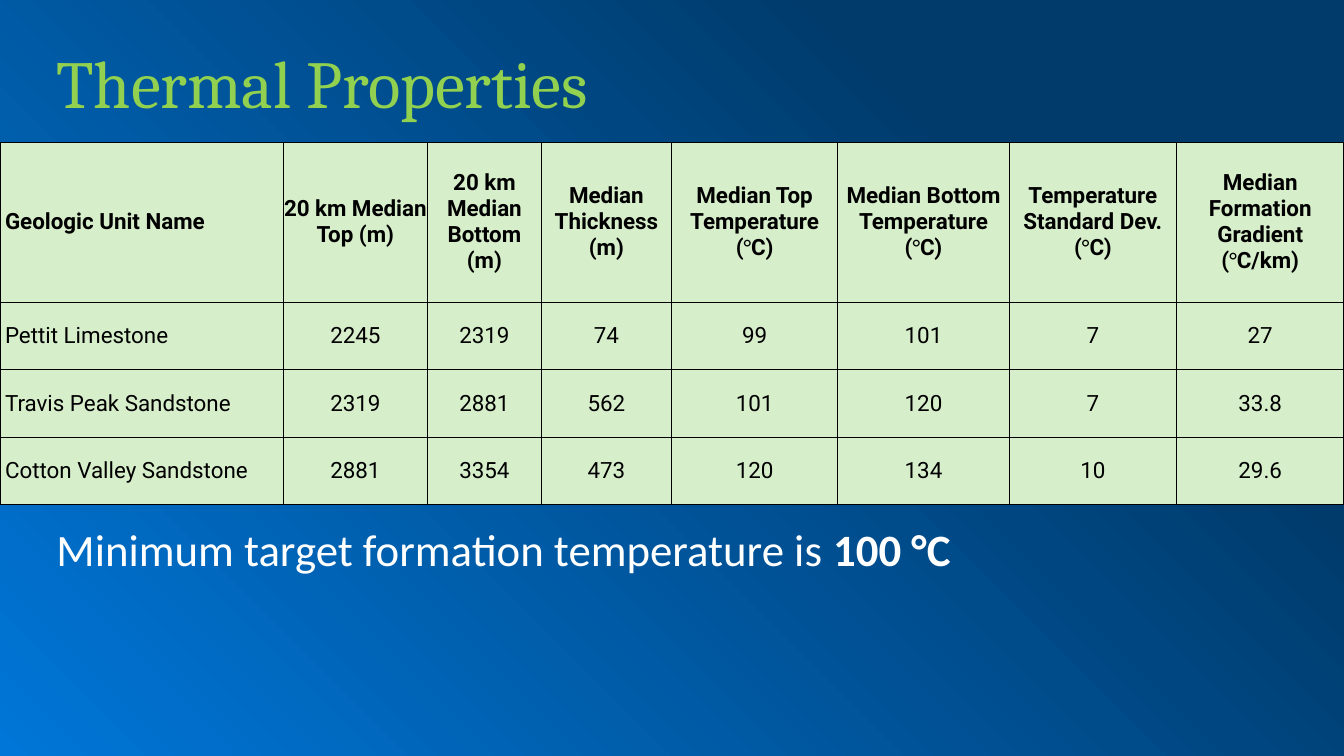
from lxml.etree import SubElement
from pptx import Presentation
from pptx.dml.color import RGBColor
from pptx.enum.text import MSO_ANCHOR as Anchor, MSO_AUTO_SIZE as AutoSize, PP_ALIGN as Align
from pptx.oxml.ns import qn
from pptx.util import Inches, Pt

COLORS = {
    "night": "003B6C", "azure": "0076D8", "lime": "92D050",
    "white": "FFFFFF", "black": "000000", "mint": "D7EECB",
}
TITLE_FONT = {"name": "Cambria", "size": Pt(48), "bold": False}
BODY_FONT = {"name": "Calibri", "size": Pt(32), "bold": False}
CELL_FONT = {"name": "Roboto", "size": Pt(16)}
DEGREE_FONT = {"name": "Calibri", "size": Pt(16), "bold": False}
COLUMN_WIDTHS = [2.81, 1.43, 1.13, 1.29, 1.65, 1.7, 1.66, 1.66]
ROW_HEIGHTS = [1.59, 0.67, 0.67, 0.67]
ROWS = [
    ["Geologic Unit Name", "20 km Median Top (m)", "20 km Median Bottom (m)",
     "Median Thickness (m)", "Median Top Temperature (°C)",
     "Median Bottom Temperature (°C)", "Temperature Standard Dev. (°C)",
     "Median Formation Gradient (°C/km)"],
    ["Pettit Limestone", "2245", "2319", "74", "99", "101", "7", "27"],
    ["Travis Peak Sandstone", "2319", "2881", "562", "101", "120", "7", "33.8"],
    ["Cotton Valley Sandstone", "2881", "3354", "473", "120", "134", "10", "29.6"],
]


def set_all(target, values):
    """Set each named attribute of the target."""
    for name, value in values.items():
        setattr(target, name, value)


def add_run(paragraph, text, font, color):
    """Append a formatted run to the paragraph."""
    run = paragraph.add_run()
    run.text = text
    set_all(run.font, font)
    run.font.color.rgb = RGBColor.from_string(COLORS[color])


def paint_background(slide):
    """Fill the slide with a diagonal blue gradient."""
    fill = slide.background.fill
    fill.gradient()
    fill.gradient_angle = 225
    for stop, position, color in zip(fill.gradient_stops, (0.25, 1), ("night", "azure")):
        stop.position = position
        stop.color.rgb = RGBColor.from_string(COLORS[color])


def fill_placeholder(placeholder, box, anchor, runs, color):
    """Place a placeholder in the box and write one unbulleted paragraph."""
    sides = ("left", "top", "width", "height")
    set_all(placeholder, dict(zip(sides, map(Inches, box))))
    frame = placeholder.text_frame
    set_all(frame, {"word_wrap": True, "auto_size": AutoSize.NONE, "vertical_anchor": anchor})
    paragraph = frame.paragraphs[0]
    set_all(paragraph, {"alignment": Align.LEFT, "line_spacing": 0.9, "space_before": Pt(0)})
    properties = paragraph._p.get_or_add_pPr()
    properties.set("marL", "0")
    properties.set("indent", "0")
    SubElement(properties, qn("a:buNone"))
    for text, font in runs:
        add_run(paragraph, text, font, color)


def add_borders(cell):
    """Draw a thin black line on every side of the cell."""
    properties = cell._tc.get_or_add_tcPr()
    for index, side in enumerate(("lnL", "lnR", "lnT", "lnB")):
        line = properties.makeelement(qn(f"a:{side}"), {"w": str(Pt(1))})
        solid = SubElement(line, qn("a:solidFill"))
        SubElement(solid, qn("a:srgbClr"), val=COLORS["black"])
        properties.insert(index, line)


def format_cell(cell, text, is_header, is_name):
    """Write one table cell, with the degree sign in its own font."""
    set_all(cell, {
        "margin_left": Inches(0.05 if is_name else 0), "margin_right": 0,
        "margin_top": 0, "margin_bottom": 0, "vertical_anchor": Anchor.MIDDLE,
    })
    cell.fill.solid()
    cell.fill.fore_color.rgb = RGBColor.from_string(COLORS["mint"])
    add_borders(cell)
    paragraph = cell.text_frame.paragraphs[0]
    paragraph.alignment = Align.LEFT if is_name else Align.CENTER
    font = {**CELL_FONT, "bold": is_header}
    before, degree, after = text.partition("°")
    for part, part_font in ((before, font), (degree, DEGREE_FONT), (after, font)):
        if part:
            add_run(paragraph, part, part_font, "black")


def add_properties_table(slide, left, top):
    """Build the table of thermal properties from its top left corner."""
    size = (sum(COLUMN_WIDTHS), sum(ROW_HEIGHTS))
    table = slide.shapes.add_table(
        len(ROWS), len(COLUMN_WIDTHS), *map(Inches, (left, top, *size))).table
    for column, width in zip(table.columns, COLUMN_WIDTHS):
        column.width = Inches(width)
    for row_index, (row, height) in enumerate(zip(table.rows, ROW_HEIGHTS)):
        row.height = Inches(height)
        for column_index, text in enumerate(ROWS[row_index]):
            format_cell(row.cells[column_index], text, row_index == 0, column_index == 0)


def main():
    """Create the slide and save the presentation."""
    presentation = Presentation()
    set_all(presentation, {"slide_width": Inches(13.33), "slide_height": Inches(7.5)})
    slide = presentation.slides.add_slide(presentation.slide_layouts[1])
    paint_background(slide)
    fill_placeholder(slide.shapes.title, (0.46, 0, 12.87, 1.72), Anchor.MIDDLE,
                     [("Thermal Properties", TITLE_FONT)], "lime")
    fill_placeholder(slide.placeholders[1], (0.46, 5.19, 11.5, 0.69), Anchor.TOP,
                     [("Minimum target formation temperature is ", BODY_FONT),
                      ("100 °C", {**BODY_FONT, "bold": True})], "white")
    add_properties_table(slide, 0, 1.41)
    presentation.save("out.pptx")


if __name__ == "__main__":
    main()
